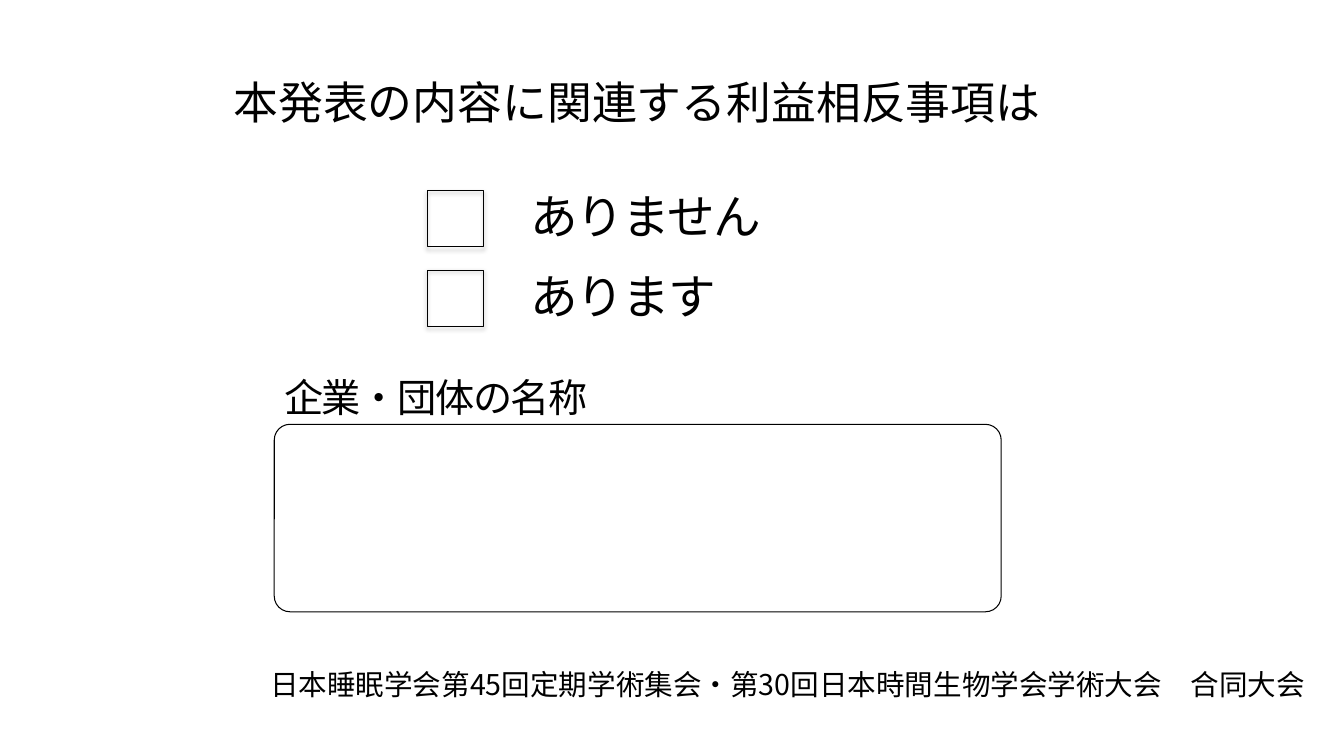
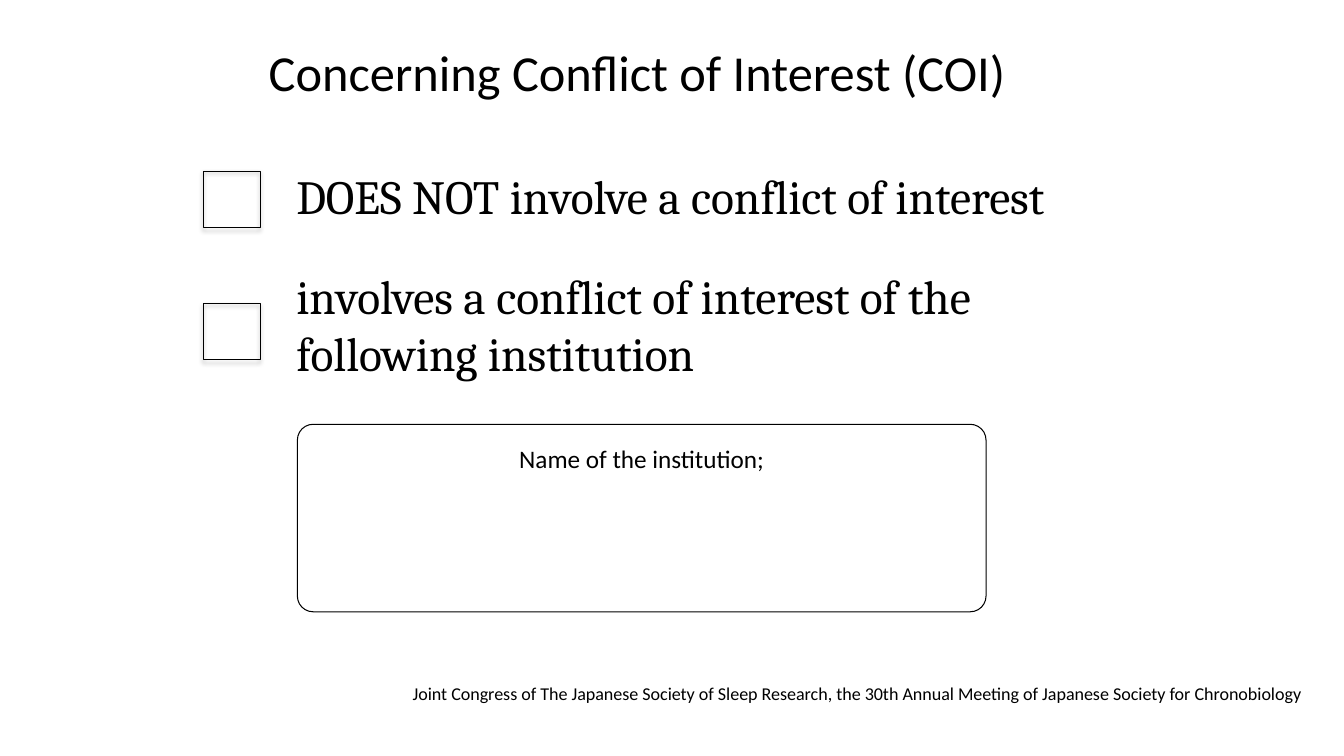
import pptx
import pptx.dml.color
import pptx.enum.shapes
import pptx.enum.text
import pptx.oxml
import pptx.oxml.ns
import pptx.util
from pptx.util import Inches

COLORS = {"ink": "000000", "paper": "FFFFFF"}
SANS, SERIF, GOTHIC = "Calibri", "Cambria", "Noto Sans CJK JP"
ALIGN = pptx.enum.text.PP_ALIGN
ANCHOR = pptx.enum.text.MSO_ANCHOR
SHAPE = pptx.enum.shapes.MSO_SHAPE
CHECK_SIZE = 0.56

SHADOW = (
    f'<a:effectLst {pptx.oxml.ns.nsdecls("a")}>'
    '<a:outerShdw blurRad="39370" dist="22860" dir="5400000" rotWithShape="0">'
    f'<a:srgbClr val="{COLORS["ink"]}"><a:alpha val="35000"/></a:srgbClr>'
    "</a:outerShdw></a:effectLst>"
)


def color(name):
    return pptx.dml.color.RGBColor.from_string(COLORS[name])


def write(box, text, *, size, font=SANS, align=ALIGN.LEFT, anchor=ANCHOR.TOP,
          line_spacing=1.0, tracking=0):
    """Put one formatted paragraph into a shape; tracking is in points."""
    frame = box.text_frame
    frame.word_wrap = True
    frame.auto_size = pptx.enum.text.MSO_AUTO_SIZE.NONE
    frame.vertical_anchor = anchor
    para = frame.paragraphs[0]
    para.alignment = align
    para.line_spacing = line_spacing
    para.space_before = pptx.util.Pt(0)
    span = para.add_run()
    span.text = text
    span.font.size = pptx.util.Pt(size)
    span.font.name = font
    span.font.color.rgb = color("ink")
    # East Asian typeface and letter spacing
    properties = span.font._element
    east_asian = pptx.oxml.parse_xml(
        f'<a:ea {pptx.oxml.ns.nsdecls("a")} typeface="{GOTHIC}"/>')
    properties.find(pptx.oxml.ns.qn("a:latin")).addnext(east_asian)
    if tracking:
        properties.set("spc", str(round(tracking * 100)))


class Disclosure:
    """Shared style of the disclosure slides, and the current slide."""

    def __init__(self):
        self.deck = pptx.Presentation()
        self.deck.slide_width = Inches(13.33)
        self.deck.slide_height = Inches(7.5)
        self.page = None

    def new_page(self):
        self.page = self.deck.slides.add_slide(self.deck.slide_layouts[0])
        fill = self.page.background.fill
        fill.solid()
        fill.fore_color.rgb = color("paper")

    def placeholder(self, index, left, top, width, height, text, **style):
        box = self.page.placeholders[index]
        box.left, box.top = Inches(left), Inches(top)
        box.width, box.height = Inches(width), Inches(height)
        write(box, text, align=ALIGN.CENTER, **style)

    def title(self, top, text, size):
        self.placeholder(0, 2.05, top, 8.54, 0.74, text, size=size,
                         anchor=ANCHOR.MIDDLE)

    def footer(self, left, top, width, height, text, **style):
        self.placeholder(1, left, top, width, height, text, **style)

    def label(self, left, top, width, height, text, **style):
        box = self.page.shapes.add_textbox(
            Inches(left), Inches(top), Inches(width), Inches(height))
        write(box, text, **style)

    def outline(self, kind, left, top, width, height):
        box = self.page.shapes.add_shape(
            kind, Inches(left), Inches(top), Inches(width), Inches(height))
        box.shadow.inherit = False
        box.fill.background()
        box.line.color.rgb = color("ink")
        box.line.width = pptx.util.Pt(0.75)
        return box

    def checkbox(self, left, top):
        box = self.outline(SHAPE.RECTANGLE, left, top, CHECK_SIZE, CHECK_SIZE)
        effects = box._element.spPr.find(pptx.oxml.ns.qn("a:effectLst"))
        effects.getparent().replace(effects, pptx.oxml.parse_xml(SHADOW))

    def answer_frame(self, left, width, text=None):
        box = self.outline(SHAPE.ROUNDED_RECTANGLE, left, 4.21, width, 1.86)
        box.adjustments[0] = 0.084
        if text:
            box.text_frame.margin_top = Inches(0.14)
            write(box, text, size=18, align=ALIGN.CENTER)


def main():
    form = Disclosure()

    # Japanese form
    form.new_page()
    form.title(0.64, "本発表の内容に関連する利益相反事項は", 32)
    for top, answer in ((1.81, "ありません"), (2.6, "あります")):
        form.checkbox(4.24, top + 0.08)
        form.label(5.16, top, 3.39, 0.74, answer, size=34, tracking=-1)
    form.label(2.72, 3.65, 3.38, 0.55, "企業・団体の名称", size=28, tracking=-1)
    form.answer_frame(2.72, 7.21)
    form.footer(2.5, 6.62, 10.62, 0.66,
                "日本睡眠学会第45回定期学術集会・第30回日本時間生物学会学術大会　合同大会",
                size=20.4, font=GOTHIC, line_spacing=0.85)

    # English form
    form.new_page()
    form.title(0.34, "Concerning Conflict of Interest (COI)", 36)
    answers = (
        (1.7, 1.61, 8.82, "DOES NOT involve a conflict of interest"),
        (3.01, 2.6, 7.61,
         "involves a conflict of interest of the following institution"),
    )
    for check_top, top, width, answer in answers:
        form.checkbox(2.02, check_top)
        form.label(2.84, top, width, 0.74, answer, size=34, font=SERIF)
    form.answer_frame(2.95, 6.83, "Name of the institution;")
    form.footer(3.67, 6.74, 9.66, 0.41,
                "Joint Congress of The Japanese Society of Sleep Research, "
                "the 30th Annual Meeting of Japanese Society for Chronobiology",
                size=12.9, line_spacing=0.9)

    form.deck.save("out.pptx")


if __name__ == "__main__":
    main()
